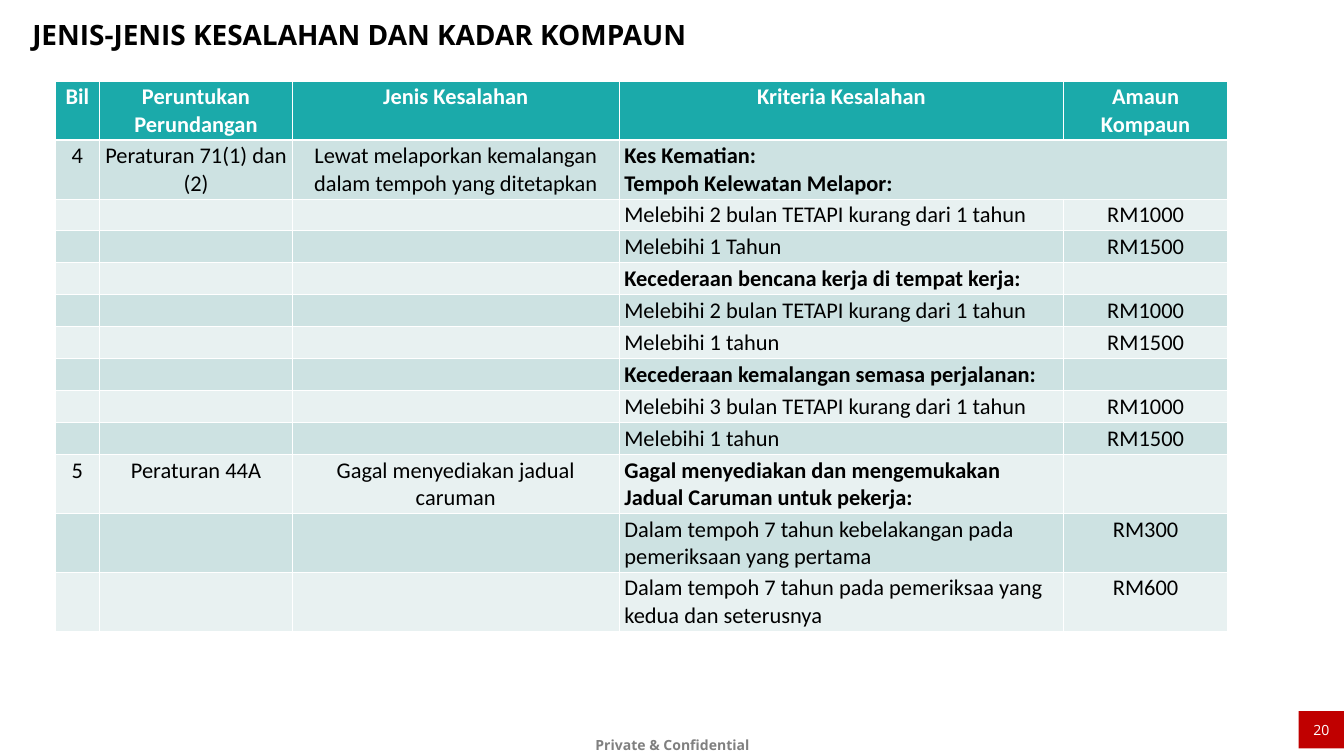
"""Build the slide on offence types and compound rates."""
from dataclasses import dataclass

from lxml.etree import SubElement
from pptx import Presentation
from pptx.dml.color import RGBColor
from pptx.enum.shapes import MSO_SHAPE
from pptx.enum.text import MSO_ANCHOR, MSO_AUTO_SIZE, PP_ALIGN
from pptx.oxml.ns import qn
from pptx.util import Inches, Pt


@dataclass(frozen=True)
class Theme:
    """Hold the fonts, type sizes and colours of the slide."""

    heading_font: str = "Open Sans"
    table_font: str = "Calibri"
    title_size: int = 40
    table_size: int = 32
    small_size: int = 20
    text: str = "000000"
    white: str = "FFFFFF"
    grey: str = "808080"
    red: str = "C00000"
    header: str = "1BAAAA"
    bands: tuple = ("CDE2E2", "E8F1F1")


THEME = Theme()
HEADINGS = ("Bil", "Peruntukan Perundangan", "Jenis Kesalahan", "Kriteria Kesalahan", "Amaun Kompaun")
COLUMN_WIDTHS = (0.89, 3.82, 6.49, 8.82, 3.25)
TALL_ROW, SHORT_ROW = 1.1, 0.6
TALL_ROWS = (0, 1, 10, 11, 12)
CRITERIA_COLUMN = 3
OFFENCES = {
    1: ("4", "Peraturan 71(1) dan (2)", "Lewat melaporkan kemalangan dalam tempoh yang ditetapkan"),
    10: ("5", "Peraturan 44A", "Gagal menyediakan jadual caruman"),
}
CRITERIA = (
    ("Kes Kematian:\nTempoh Kelewatan Melapor:", ""),
    ("Melebihi 2 bulan TETAPI kurang dari 1 tahun", "RM1000"),
    ("Melebihi 1 Tahun", "RM1500"),
    ("Kecederaan bencana kerja di tempat kerja:", ""),
    ("Melebihi 2 bulan TETAPI kurang dari 1 tahun", "RM1000"),
    ("Melebihi 1 tahun", "RM1500"),
    ("Kecederaan kemalangan semasa perjalanan:", ""),
    ("Melebihi 3 bulan TETAPI kurang dari 1 tahun", "RM1000"),
    ("Melebihi 1 tahun", "RM1500"),
    ("Gagal menyediakan dan mengemukakan Jadual Caruman untuk pekerja:", ""),
    ("Dalam tempoh 7 tahun kebelakangan pada pemeriksaan yang pertama", "RM300"),
    ("Dalam tempoh 7 tahun pada pemeriksaa yang kedua dan seterusnya", "RM600"),
)


def write_text(frame, text, size, color, font, bold=False, align=PP_ALIGN.LEFT):
    """Fill a text frame with uniformly styled paragraphs."""
    frame.text = text
    for para in frame.paragraphs:
        para.alignment = align
        para.font.size = Pt(size)
        para.font.name = font
        para.font.bold = bold
        para.font.color.rgb = RGBColor.from_string(color)


def set_margins(frame, horizontal, vertical):
    """Set the inner margins of a text frame in inches."""
    frame.margin_left = frame.margin_right = Inches(horizontal)
    frame.margin_top = frame.margin_bottom = Inches(vertical)


def add_title(page, text):
    """Place and style the title placeholder."""
    title = page.shapes.title
    title.left, title.top = Inches(0.54), Inches(0.3)
    title.width, title.height = Inches(23.03), Inches(1.25)
    frame = title.text_frame
    frame.auto_size = MSO_AUTO_SIZE.NONE
    frame.vertical_anchor = MSO_ANCHOR.TOP
    write_text(frame, text, THEME.title_size, THEME.text, THEME.heading_font, bold=True)


def add_footer(page, text):
    """Add the centred confidentiality footer."""
    box = page.shapes.add_textbox(Inches(11.53), Inches(14.42), Inches(3.63), Inches(0.78))
    frame = box.text_frame
    frame.word_wrap = True
    set_margins(frame, 0.24, 0.12)
    write_text(frame, text, THEME.small_size, THEME.grey, THEME.heading_font, True, PP_ALIGN.CENTER)
    frame.paragraphs[0].line_spacing = 1.2


def add_page_number(page, number):
    """Add the red page number block."""
    block = page.shapes.add_shape(
        MSO_SHAPE.RECTANGLE, Inches(25.77), Inches(14.11), Inches(0.9), Inches(0.74)
    )
    block.shadow.inherit = False
    block.fill.solid()
    block.fill.fore_color.rgb = RGBColor.from_string(THEME.red)
    block.line.fill.background()
    frame = block.text_frame
    frame.vertical_anchor = MSO_ANCHOR.MIDDLE
    set_margins(frame, 0, 0.2)
    write_text(frame, number, THEME.small_size, THEME.white, THEME.heading_font, align=PP_ALIGN.CENTER)


def style_cell(cell, fill, bottom_width=1, top_width=1):
    """Give a cell white borders and a solid fill."""
    properties = cell._tc.get_or_add_tcPr()
    widths = {"lnL": 1, "lnR": 1, "lnT": top_width, "lnB": bottom_width}
    for side, width in widths.items():
        line = SubElement(properties, qn(f"a:{side}"), w=str(Pt(width)))
        solid = SubElement(line, qn("a:solidFill"))
        SubElement(solid, qn("a:srgbClr"), val=THEME.white)
    cell.fill.solid()
    cell.fill.fore_color.rgb = RGBColor.from_string(fill)


def table_rows():
    """Return the texts of all table rows."""
    rows = [HEADINGS]
    for index, criterion in enumerate(CRITERIA, start=1):
        rows.append(OFFENCES.get(index, ("", "", "")) + criterion)
    return rows


def add_offence_table(page):
    """Add the banded table of offences and compound amounts."""
    rows = table_rows()
    heights = [TALL_ROW if index in TALL_ROWS else SHORT_ROW for index in range(len(rows))]
    table = page.shapes.add_table(
        len(rows), len(COLUMN_WIDTHS), Inches(1.09), Inches(1.61),
        Inches(sum(COLUMN_WIDTHS)), Inches(sum(heights)),
    ).table
    for column, width in zip(table.columns, COLUMN_WIDTHS):
        column.width = Inches(width)
    for row_index, (row, texts) in enumerate(zip(table.rows, rows)):
        row.height = Inches(heights[row_index])
        is_header = row_index == 0
        fill = THEME.header if is_header else THEME.bands[(row_index - 1) % 2]
        for column_index, (cell, text) in enumerate(zip(row.cells, texts)):
            style_cell(cell, fill, 3 if is_header else 1, 3 if row_index == 1 else 1)
            if not text:
                continue
            is_criterion = column_index == CRITERIA_COLUMN and not is_header
            write_text(
                cell.text_frame, text, THEME.table_size,
                THEME.white if is_header else THEME.text, THEME.table_font,
                bold=is_header or (is_criterion and text.endswith(":")),
                align=PP_ALIGN.LEFT if is_criterion else PP_ALIGN.CENTER,
            )
    table.cell(1, CRITERIA_COLUMN).merge(table.cell(1, CRITERIA_COLUMN + 1))


def main():
    """Build and save the deck."""
    deck = Presentation()
    deck.slide_width, deck.slide_height = Inches(26.67), Inches(15)
    page = deck.slides.add_slide(deck.slide_layouts[5])
    add_footer(page, "Private & Confidential")
    add_page_number(page, "20")
    add_title(page, "JENIS-JENIS KESALAHAN DAN KADAR KOMPAUN")
    add_offence_table(page)
    deck.save("out.pptx")


if __name__ == "__main__":
    main()
